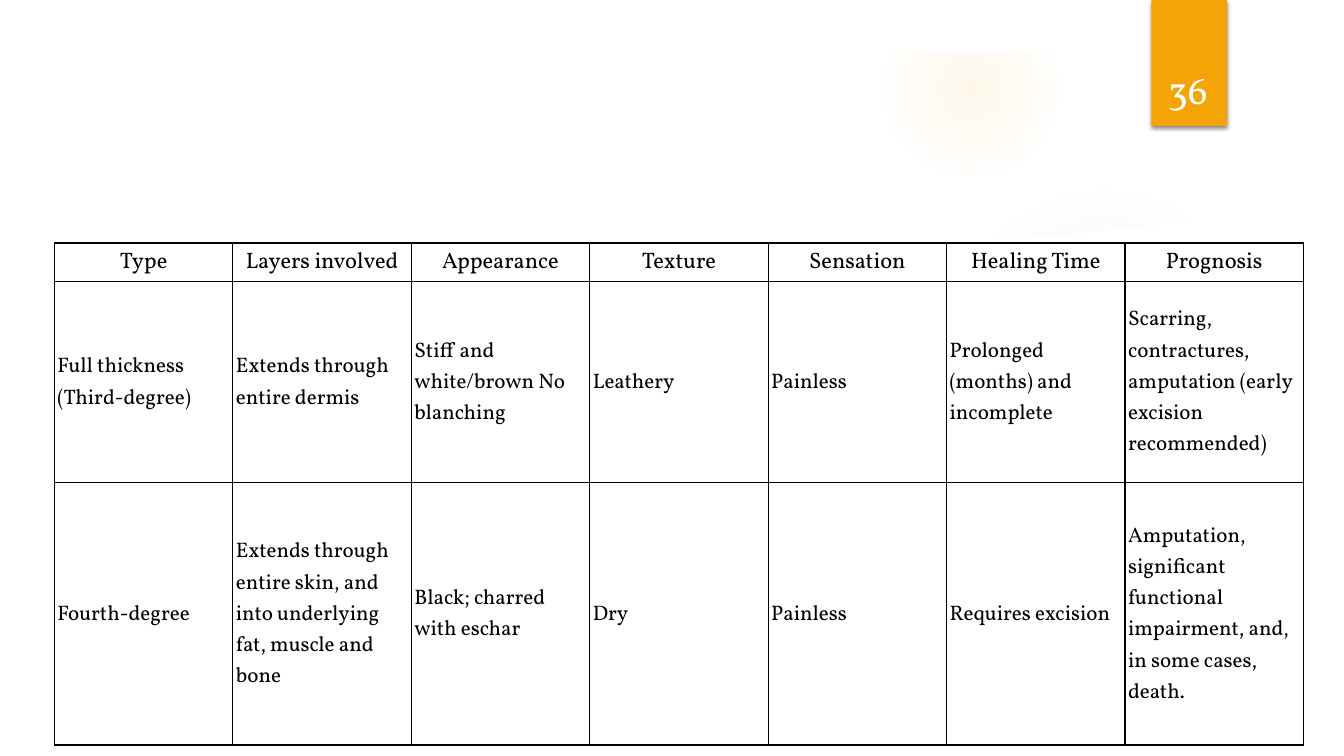
"""Build the slide comparing third-degree and fourth-degree burns."""
from pptx import Presentation
from pptx.dml.color import RGBColor
from pptx.enum.shapes import MSO_SHAPE as Shape
from pptx.enum.text import MSO_ANCHOR as Anchor, PP_ALIGN as Align
from pptx.oxml import parse_xml
from pptx.oxml.ns import nsdecls, qn
from pptx.util import Inches, Pt

FONT = "Vollkorn"
WHITE, BLACK, ORANGE = "FFFFFF", "000000", "F5A408"
LEFT, COLUMN_WIDTH = 0.54, 1.77


def paint(fill, color):
    fill.solid()
    fill.fore_color.rgb = RGBColor.from_string(color)


def style_text(paragraph, size, color, align):
    paragraph.alignment = align
    paragraph.font.name = FONT
    paragraph.font.size = Pt(size)
    paragraph.font.color.rgb = RGBColor.from_string(color)


deck = Presentation()
deck.slide_width, deck.slide_height = Inches(13.33), Inches(7.5)
slide = deck.slides.add_slide(deck.slide_layouts[6])
shapes = slide.shapes

glows = [
    (9.41, 1.83, 3.08, "8EBBD2", [(0, 7), (36, 6), (69, 0)]),
    (8.75, 0, 1.75, "FAC96A", [(0, 14), (36, 7), (73, 0)]),
]
for left, top, diameter, color, stops in glows:
    glow = shapes.add_shape(Shape.OVAL, Inches(left), Inches(top), Inches(diameter), Inches(diameter))
    glow.shadow.inherit = False
    glow.fill.background()
    glow.line.fill.background()
    stop_xml = "".join(
        f'<a:gs pos="{position * 1000}"><a:srgbClr val="{color}"><a:alpha val="{alpha * 1000}"/></a:srgbClr></a:gs>'
        for position, alpha in stops
    )
    gradient = parse_xml(
        f'<a:gradFill {nsdecls("a")} rotWithShape="1"><a:gsLst>{stop_xml}</a:gsLst><a:path path="circle">'
        '<a:fillToRect l="50000" t="50000" r="50000" b="50000"/></a:path></a:gradFill>'
    )
    properties = glow._element.spPr
    properties.replace(properties.find(qn("a:noFill")), gradient)

panel_edge = [
    (12.84, 2.04), (12, 2.17), (11.16, 2.27), (10.32, 2.35), (9.49, 2.41), (8.4, 2.46), (7.08, 2.48),
    (5.83, 2.46), (4.44, 2.41), (3.21, 2.33), (2.16, 2.24), (1.35, 2.15), (0.5, 2.04),
]
outline = shapes.build_freeform(Inches(0.5), Inches(7))
outline.add_line_segments([(Inches(x), Inches(y)) for x, y in [(12.84, 7), *panel_edge]])
panel = outline.convert_to_shape()
border = shapes.add_shape(Shape.FRAME, 0, 0, deck.slide_width, deck.slide_height)
border.adjustments[0] = 0.52 / 7.5
ribbon = shapes.add_shape(Shape.RECTANGLE, Inches(11.42), 0, Inches(0.75), Inches(1.25))
for part, color in [(panel, WHITE), (border, WHITE), (ribbon, ORANGE)]:
    part.shadow.inherit = False
    paint(part.fill, color)
    part.line.fill.background()
ribbon._element.spPr.find(qn("a:effectLst")).append(parse_xml(
    f'<a:outerShdw {nsdecls("a")} blurRad="{Pt(3)}" dist="{Pt(2)}" dir="5400000" rotWithShape="0">'
    f'<a:srgbClr val="{BLACK}"><a:alpha val="45000"/></a:srgbClr></a:outerShdw>'
))

burns = [
    ["Full thickness (Third-degree)", "Extends through entire dermis", "Stiff and white/brown No blanching",
     "Leathery", "Painless", "Prolonged (months) and incomplete",
     "Scarring, contractures, amputation (early excision recommended)"],
    ["Fourth-degree", "Extends through entire skin, and into underlying fat, muscle and bone",
     "Black; charred with eschar", "Dry", "Painless", "Requires excision",
     "Amputation, significant functional impairment, and, in some cases, death."],
]
headings = [["Type", "Layers involved", "Appearance", "Texture", "Sensation", "Healing Time", "Prognosis"]]

tables = [
    (burns, 2.79, [2, 2.6], 15, Align.LEFT, 0.03),
    (headings, 2.41, [0.38], 16, Align.CENTER, 0.02),
]
for rows, top, heights, size, align, inset in tables:
    table = shapes.add_table(
        len(rows), len(rows[0]), Inches(LEFT), Inches(top),
        Inches(COLUMN_WIDTH * len(rows[0])), Inches(sum(heights)),
    ).table
    table.first_row = table.horz_banding = False
    for column in table.columns:
        column.width = Inches(COLUMN_WIDTH)
    for row, height, texts in zip(table.rows, heights, rows):
        row.height = Inches(height)
        for cell, text in zip(row.cells, texts):
            cell.text = text
            cell.vertical_anchor = Anchor.MIDDLE
            cell.margin_left = cell.margin_right = cell.margin_top = cell.margin_bottom = Inches(inset)
            style_text(cell.text_frame.paragraphs[0], size, BLACK, align)
            cell.text_frame.paragraphs[0].line_spacing = 1.07
            for side in "LRTB":
                cell._tc.get_or_add_tcPr().append(parse_xml(
                    f'<a:ln{side} {nsdecls("a")} w="{Pt(1)}"><a:solidFill><a:srgbClr val="{BLACK}"/>'
                    f'</a:solidFill></a:ln{side}>'
                ))
            cell.fill.background()

page_number = shapes.add_textbox(Inches(11.32), Inches(0.32), Inches(0.92), Inches(0.84)).text_frame
page_number.word_wrap = True
page_number.vertical_anchor = Anchor.BOTTOM
page_number.text = "36"
style_text(page_number.paragraphs[0], 28, WHITE, Align.CENTER)

deck.save("out.pptx")
